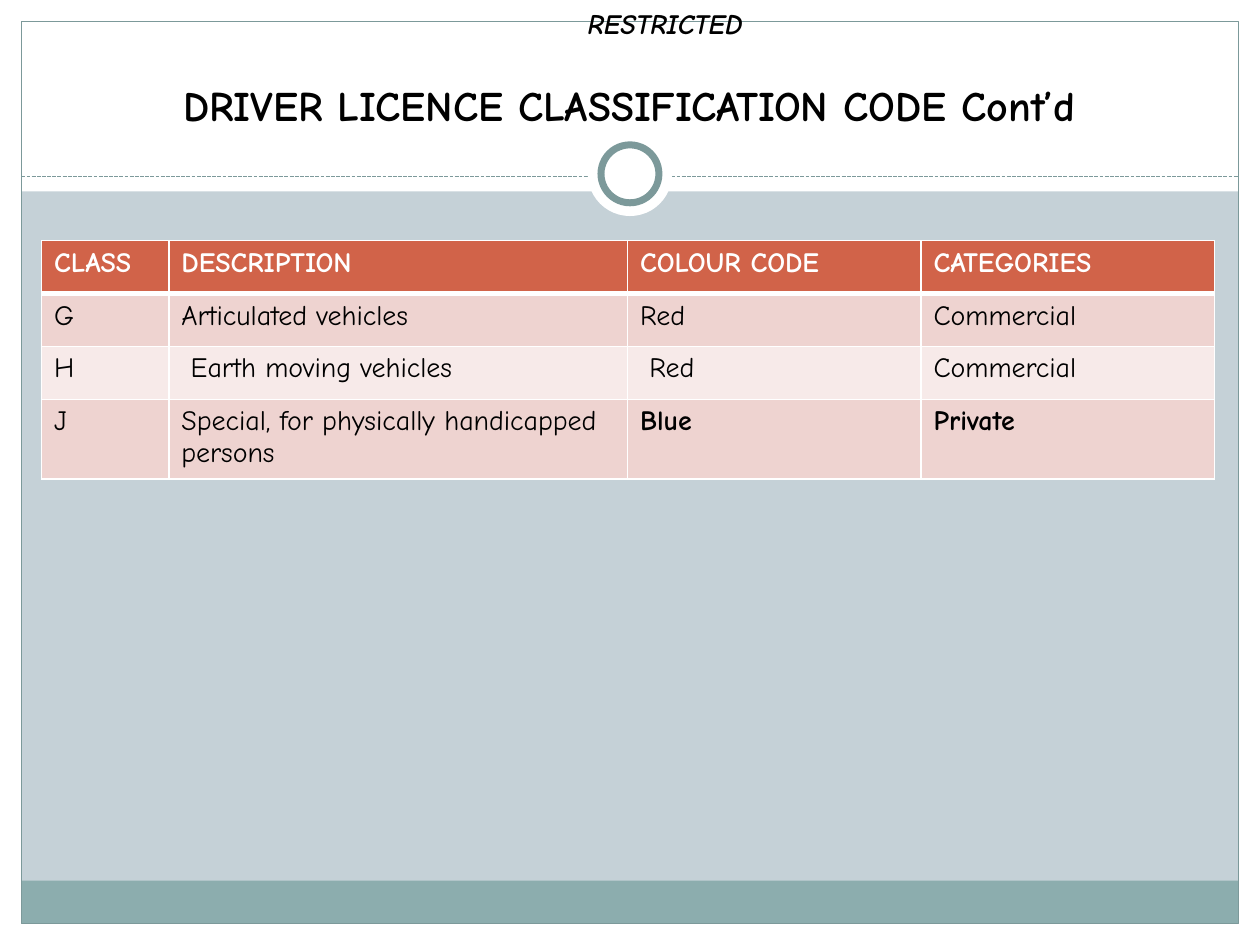
from pptx import Presentation
from pptx.dml.color import RGBColor
from pptx.enum.dml import MSO_LINE
from pptx.enum.shapes import MSO_CONNECTOR, MSO_SHAPE
from pptx.enum.text import MSO_ANCHOR, PP_ALIGN
from pptx.oxml.ns import qn
from pptx.util import Inches, Pt
from lxml.etree import SubElement

W, H, EDGE = 10, 7.5, 0.17
FONT = "Comic Neue"
COLORS = {
    "back": "C5D1D7", "white": "FFFFFF", "black": "000000",
    "line": "7C999A", "footer": "8CADAE",
    "head": "D16349", "odd": "EED3D0", "even": "F7EAE9",
}
COLS = [1.01, 3.64, 2.33, 2.33]
ROW_HEIGHTS = [0.42, 0.42, 0.42, 0.61]
ROWS = [
    ["CLASS", "DESCRIPTION", "COLOUR CODE", "CATEGORIES"],
    ["G", "Articulated vehicles", "Red", "Commercial"],
    ["H", " Earth moving vehicles", " Red", "Commercial"],
    ["J", "Special, for physically handicapped persons", "Blue", "Private"],
]


def rgb(name):
    return RGBColor.from_string(COLORS[name])


def write(tf, text, size=16, color="black", bold=False, italic=False,
          align=PP_ALIGN.LEFT, anchor=MSO_ANCHOR.TOP):
    tf.word_wrap = True
    tf.vertical_anchor = anchor
    p = tf.paragraphs[0]
    p.alignment = align
    r = p.add_run()
    r.text = text
    f = r.font
    f.name, f.size, f.bold, f.italic = FONT, Pt(size), bold, italic
    f.color.rgb = rgb(color)


def add_text(s, x, y, w, h, text, **fmt):
    tb = s.shapes.add_textbox(*map(Inches, (x, y, w, h)))
    write(tb.text_frame, text, align=PP_ALIGN.CENTER, **fmt)


def add_block(s, x, y, w, h, fill=None, line=None, width=0.75, kind=MSO_SHAPE.RECTANGLE):
    sp = s.shapes.add_shape(kind, *map(Inches, (x, y, w, h)))
    sp.shadow.inherit = False
    if fill:
        sp.fill.solid()
        sp.fill.fore_color.rgb = rgb(fill)
    else:
        sp.fill.background()
    if line:
        sp.line.color.rgb = rgb(line)
        sp.line.width = Pt(width)
    else:
        sp.line.fill.background()


def add_circle(s, cy, d, **style):
    add_block(s, (W - d) / 2, cy - d / 2, d, d, kind=MSO_SHAPE.OVAL, **style)


def add_dashes(s, y):
    c = s.shapes.add_connector(MSO_CONNECTOR.STRAIGHT, Inches(EDGE), Inches(y),
                               Inches(W - EDGE), Inches(y))
    c.line.color.rgb = rgb("line")
    c.line.width = Pt(0.75)
    c.line.dash_style = MSO_LINE.SQUARE_DOT
    SubElement(c._element.spPr, qn("a:effectLst"))


def add_borders(cell, bottom):
    tcPr = cell._tc.get_or_add_tcPr()
    widths = {"lnL": 1, "lnR": 1, "lnT": 1, "lnB": bottom}
    for i, (side, width) in enumerate(widths.items()):
        ln = tcPr.makeelement(qn(f"a:{side}"), {"w": str(Pt(width))})
        fill = SubElement(ln, qn("a:solidFill"))
        SubElement(fill, qn("a:srgbClr"), val=COLORS["white"])
        tcPr.insert(i, ln)


def add_licence_table(s, x, y):
    frame = s.shapes.add_table(len(ROWS), len(COLS), *map(
        Inches, (x, y, sum(COLS), sum(ROW_HEIGHTS))))
    table = frame.table
    for col, width in zip(table.columns, COLS):
        col.width = Inches(width)
    for i, (row, values) in enumerate(zip(table.rows, ROWS)):
        row.height = Inches(ROW_HEIGHTS[i])
        head = i == 0
        fill = "head" if head else "odd" if i % 2 else "even"
        for cell, text in zip(row.cells, values):
            cell.fill.solid()
            cell.fill.fore_color.rgb = rgb(fill)
            add_borders(cell, bottom=3 if head else 1)
            write(cell.text_frame, text, color="white" if head else "black",
                  bold=head or text in ("Blue", "Private"))


def add_background(s):
    s.background.fill.solid()
    s.background.fill.fore_color.rgb = rgb("back")
    for box in ((0, H - EDGE, W, EDGE), (0, 0, W, 1.52),
                (0, 0, EDGE, H), (W - EDGE, 0, EDGE, H)):
        add_block(s, *box, fill="white")
    add_block(s, EDGE, 6.99, W - 2 * EDGE, 0.34, fill="footer")
    add_block(s, EDGE, EDGE, W - 2 * EDGE, H - 2 * EDGE, line="line")
    add_dashes(s, 1.4)
    add_circle(s, 1.38, 0.67, fill="white")
    add_circle(s, 1.38, 0.46, fill="white", line="line", width=4)


def main():
    prs = Presentation()
    prs.slide_width, prs.slide_height = Inches(W), Inches(H)
    s = prs.slides.add_slide(prs.slide_layouts[6])
    add_background(s)
    add_text(s, 0.33, 0.25, 9.33, 0.83, "DRIVER LICENCE CLASSIFICATION CODE Cont’d",
             size=24, bold=True, anchor=MSO_ANCHOR.BOTTOM)
    add_licence_table(s, 0.33, 1.91)
    add_text(s, 0.71, 0, 9.14, 0.63, "RESTRICTED", bold=True, italic=True)
    prs.save("out.pptx")


if __name__ == "__main__":
    main()
